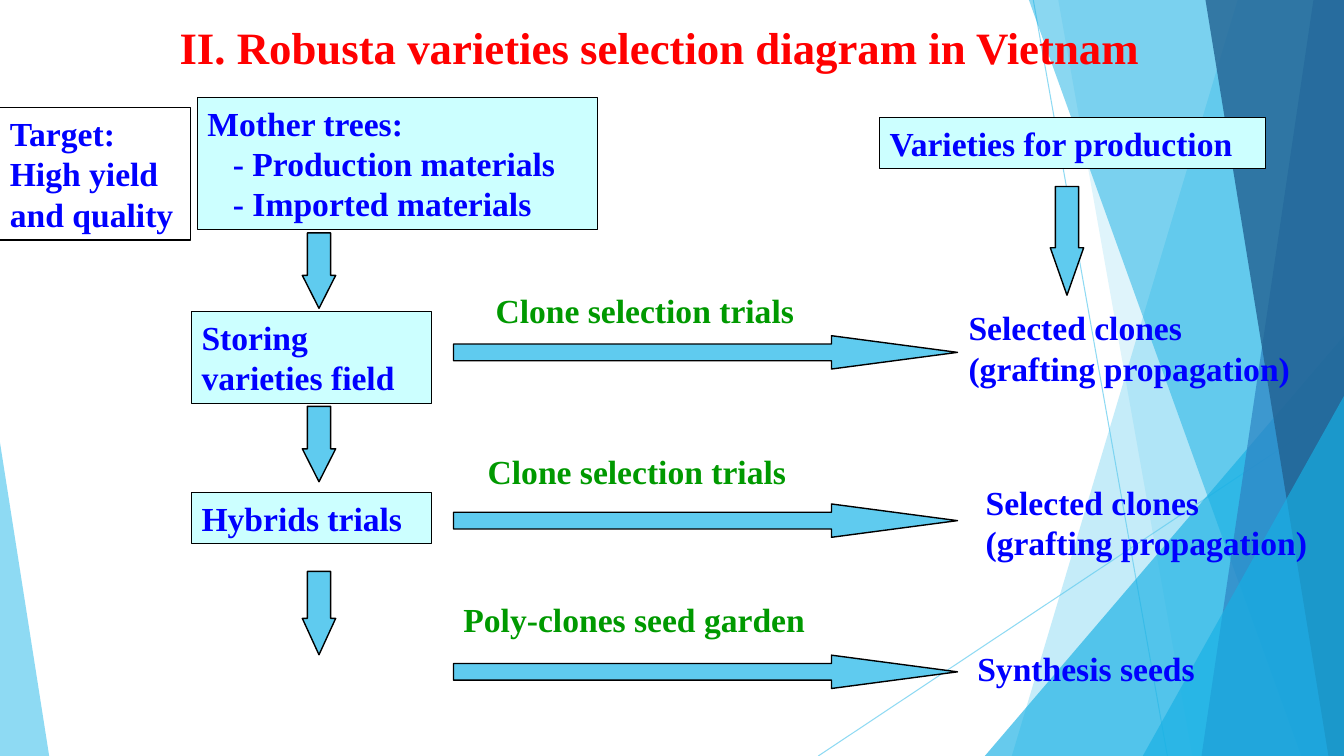
from typing import NamedTuple

from lxml import etree
from pptx import Presentation
from pptx.dml.color import RGBColor
from pptx.enum import shapes, text
from pptx.oxml import ns
from pptx.util import Cm, Pt

RED = RGBColor(0xFF, 0x00, 0x00)
BLUE = RGBColor(0x00, 0x00, 0xFF)
GREEN = RGBColor(0x00, 0x99, 0x00)
BLACK = RGBColor(0x00, 0x00, 0x00)
PALE_CYAN = RGBColor(0xCC, 0xFF, 0xFF)
SKY = RGBColor(0x5F, 0xCB, 0xEF)
CYAN = RGBColor(0x17, 0xB0, 0xE4)
STEEL = RGBColor(0x2E, 0x83, 0xC3)
NAVY = RGBColor(0x22, 0x62, 0x92)
FONT = "Times New Roman"
SHAPE = shapes.MSO_SHAPE
DOWN_HEAD = 0.436
RIGHT_HEAD = 0.25


class Box(NamedTuple):
    left: float
    top: float
    width: float
    height: float

    def inside(self, left, top, width, height):
        return Box(self.left + left, self.top + top, width, height)

    def lengths(self):
        return [Cm(value) for value in self]


def set_alpha(shape, percent):
    color = shape._element.spPr.find(".//" + ns.qn("a:srgbClr"))
    etree.SubElement(color, ns.qn("a:alpha"), val=str(percent * 1000))


def paint_facet(shape, color, percent):
    shape.shadow.inherit = False
    shape.fill.solid()
    shape.fill.fore_color.rgb = color
    set_alpha(shape, percent)
    shape.line.fill.background()


def add_shard(slide, box, top_x, bottom_x, color, percent):
    right, bottom = box.left + box.width, box.top + box.height
    corners = [(right, box.top), (right, bottom), (box.left + bottom_x, bottom)]
    builder = slide.shapes.build_freeform(Cm(box.left + top_x), Cm(box.top))
    builder.add_line_segments([(Cm(x), Cm(y)) for x, y in corners], close=True)
    paint_facet(builder.convert_to_shape(), color, percent)


def add_triangle(slide, box, apex, color, percent):
    triangle = slide.shapes.add_shape(SHAPE.ISOSCELES_TRIANGLE, *box.lengths())
    triangle.adjustments[0] = apex
    paint_facet(triangle, color, percent)


def add_ray(slide, box, start, end):
    points = [Cm(value) for x, y in (start, end)
              for value in (box.left + x, box.top + y)]
    ray = slide.shapes.add_connector(shapes.MSO_CONNECTOR.STRAIGHT, *points)
    ray.line.color.rgb = SKY
    ray.line.width = Pt(0.75)
    set_alpha(ray, 70)
    etree.SubElement(ray._element.spPr, ns.qn("a:effectLst"))


def draw_backdrop(slide, box):
    add_ray(slide, box, (26.04, 0), (29.42, box.height))
    add_ray(slide, box, (box.width, 10.24), (20.62, box.height))
    add_shard(slide, box, 31.19, 25.5, SKY, 36)
    add_shard(slide, box, 26.67, 30.05, SKY, 20)
    add_triangle(slide, box.inside(24.82, 8.46, 9.05, 10.59), 1, CYAN, 66)
    add_shard(slide, box, 25.93, 32.79, CYAN, 50)
    add_shard(slide, box, 33.1, 30.28, STEEL, 70)
    add_shard(slide, box, 30.38, 33.48, NAVY, 80)
    add_triangle(slide, box.inside(28.8, 9.98, 5.07, 9.07), 1, CYAN, 66)
    add_triangle(slide, box.inside(0, 11.15, 1.24, 7.9), 0, SKY, 70)


def write(shape, lines, color, size=24):
    frame = shape.text_frame
    frame.word_wrap = True
    frame.auto_size = text.MSO_AUTO_SIZE.NONE
    frame.vertical_anchor = text.MSO_ANCHOR.TOP
    for index, line in enumerate(lines):
        paragraph = frame.add_paragraph() if index else frame.paragraphs[0]
        paragraph.text = line
        paragraph.alignment = text.PP_ALIGN.LEFT
        paragraph.font.name = FONT
        paragraph.font.size = Pt(size)
        paragraph.font.bold = True
        paragraph.font.color.rgb = color


def add_title(slide, box, wording):
    title = slide.shapes.title
    slide.shapes._spTree.append(title._element)
    title.left, title.top, title.width, title.height = box.lengths()
    write(title, [wording], RED, 32)


def add_label(slide, box, wording, color):
    write(slide.shapes.add_textbox(*box.lengths()), [wording], color)


def add_step(slide, box, *lines, fill=PALE_CYAN):
    step = slide.shapes.add_shape(SHAPE.RECTANGLE, *box.lengths())
    step.shadow.inherit = False
    if fill is None:
        step.fill.background()
    else:
        step.fill.solid()
        step.fill.fore_color.rgb = fill
    step.line.color.rgb = BLACK
    step.line.width = Pt(0.75)
    write(step, lines, BLUE)
    return step


def add_arrow(slide, box, kind, shaft, head):
    arrow = slide.shapes.add_shape(kind, *box.lengths())
    arrow.adjustments[0] = shaft
    arrow.adjustments[1] = head * max(box.width, box.height) / min(box.width, box.height)
    arrow.shadow.inherit = False
    arrow.fill.solid()
    arrow.fill.fore_color.rgb = SKY
    arrow.line.color.rgb = BLACK
    arrow.line.width = Pt(1)


def add_down_arrow(slide, box):
    add_arrow(slide, box, SHAPE.DOWN_ARROW, 0.7, DOWN_HEAD)


def draw_materials(slide, box):
    mother_trees = add_step(slide, box.inside(4.98, 0, 10.08, 3.33), "Mother trees:",
                            "- Production materials", "- Imported materials")
    for paragraph in mother_trees.text_frame.paragraphs[1:]:
        paragraph._p.get_or_add_pPr().set("marL", str(Cm(0.64)))
    add_step(slide, box.inside(4.83, 5.39, 6.05, 2.31), "Storing varieties field")
    add_step(slide, box.inside(4.83, 9.96, 6.05, 1.27), "Hybrids trials")
    for top, length in ((3.41, 1.9), (7.78, 1.9), (11.94, 2.1)):
        add_down_arrow(slide, box.inside(7.62, top, 0.84, length))
    add_step(slide, box.inside(0, 0.26, 4.8, 3.33), "Target: High yield and quality",
             fill=None)


def draw_production(slide, box):
    add_step(slide, box.inside(0, 0, box.width, 1.27), "Varieties for production")
    add_down_arrow(slide, box.inside(4.3, 1.73, 0.84, 2.74))


def draw_trial(slide, box, trial, trial_at, result, result_at):
    add_label(slide, box.inside(*trial_at, 9.5, 1.27), trial, GREEN)
    add_arrow(slide, box.inside(0, 1.6, 12.7, 0.84), SHAPE.RIGHT_ARROW, 0.5, RIGHT_HEAD)
    height = 1.27 + 1.04 * result.count("\n")
    add_label(slide, box.inside(*result_at, 9.3, height), result, BLUE)


def main():
    presentation = Presentation()
    presentation.slide_width, presentation.slide_height = Cm(33.87), Cm(19.05)
    slide = presentation.slides.add_slide(presentation.slide_layouts[5])
    draw_backdrop(slide, Box(0, 0, 33.87, 19.05))
    add_title(slide, Box(4.27, 0.38, 27.64, 1.63),
              "II. Robusta varieties selection diagram in Vietnam")
    draw_materials(slide, Box(0, 2.46, 15.06, 14.04))
    draw_production(slide, Box(22.17, 2.97, 9.73, 4.47))
    clones = "Selected clones\n(grafting propagation)"
    trials = (
        (6.86, "Clone selection trials", (0.81, 0.33), clones, (12.73, 0.76)),
        (11.1, "Clone selection trials", (0.61, 0.13), clones, (13.16, 0.91)),
        (14.91, "Poly-clones seed garden", (0, 0.05), "Synthesis seeds", (12.95, 1.3)),
    )
    for top, *parts in trials:
        draw_trial(slide, Box(11.43, top, 22.44, 3.2), *parts)
    presentation.save("out.pptx")


if __name__ == "__main__":
    main()
